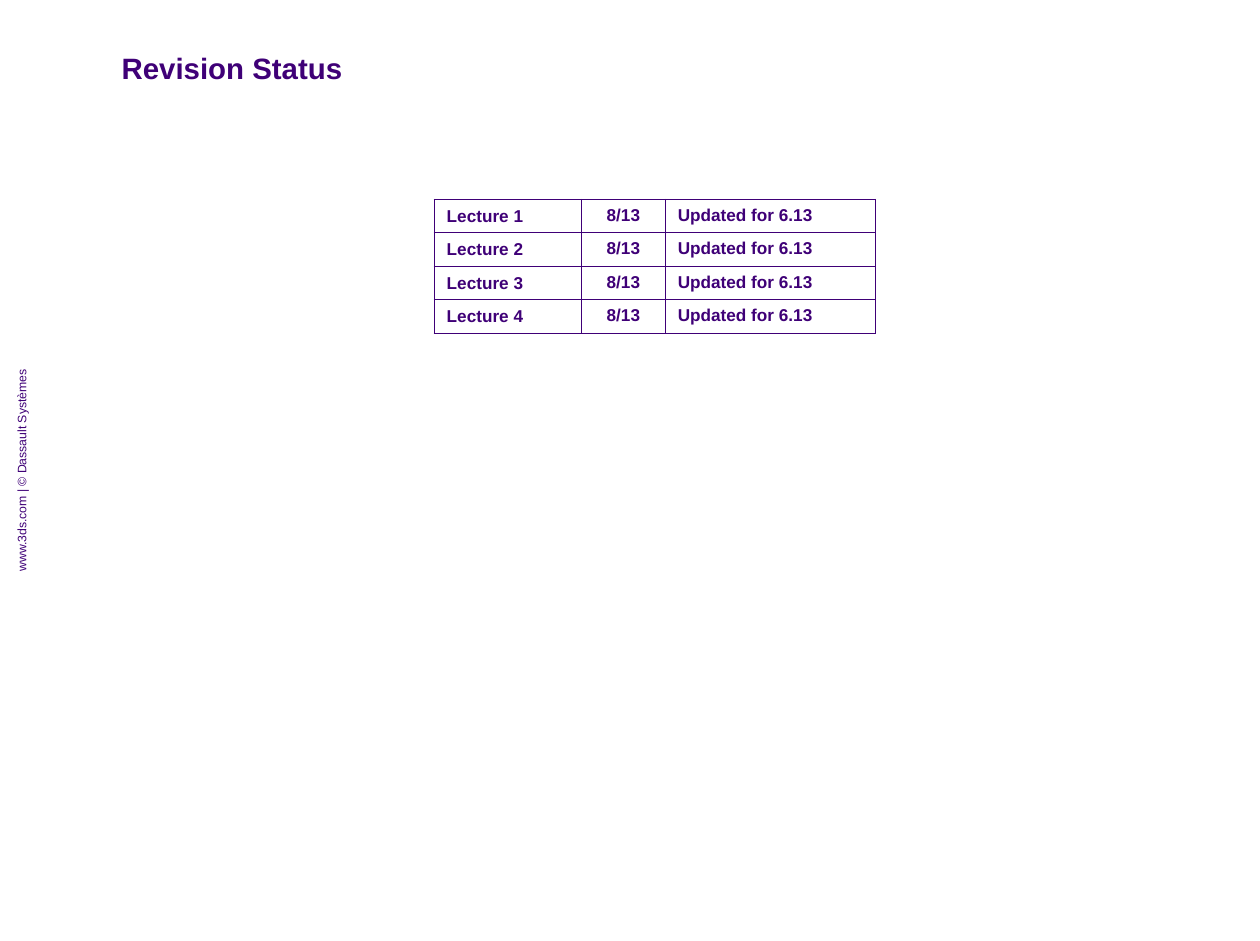
from lxml import etree
from pptx import Presentation
from pptx import util as u
from pptx.dml.color import RGBColor
from pptx.enum import text
from pptx.oxml import ns

PURPLE = RGBColor(0x3F, 0x00, 0x77)
WHITE = RGBColor(0xFF, 0xFF, 0xFF)
LECTURES = [(f"Lecture {number}", "8/13", "Updated for 6.13") for number in range(1, 5)]
COLUMN_WIDTHS = (4.24, 2.41, 6.05)


def write(paragraph, wording, size, bold=False, align=text.PP_ALIGN.LEFT):
    """Add one purple Arial run to a paragraph."""
    paragraph.alignment = align
    paragraph.space_before = u.Pt(0)
    run = paragraph.add_run()
    run.text = wording
    run.font.name = "Arial"
    run.font.size = u.Pt(size)
    run.font.bold = bold
    run.font.color.rgb = PURPLE


def set_margins(holder, side, end):
    """Set equal side margins and equal top and bottom margins."""
    holder.margin_left = holder.margin_right = u.Cm(side)
    holder.margin_top = holder.margin_bottom = u.Cm(end)


def add_borders(cell):
    """Draw a thin purple line on each side of a table cell."""
    properties = cell._tc.get_or_add_tcPr()
    for side in ("lnL", "lnR", "lnT", "lnB"):
        line = etree.SubElement(properties, ns.qn(f"a:{side}"), w=str(u.Pt(1)))
        fill = etree.SubElement(line, ns.qn("a:solidFill"))
        etree.SubElement(fill, ns.qn("a:srgbClr"), val=str(PURPLE))


def place_title(slide, left, top, width, height):
    """Move and fill the title placeholder."""
    title = slide.shapes.title
    title.left, title.top, title.width, title.height = map(u.Cm, (left, top, width, height))
    frame = title.text_frame
    frame.word_wrap = True
    frame.auto_size = text.MSO_AUTO_SIZE.NONE
    frame.vertical_anchor = text.MSO_ANCHOR.MIDDLE
    set_margins(frame, 0.25, 0.13)
    write(frame.paragraphs[0], "Revision Status", 24, bold=True)


def add_side_credit(slide, center_x, center_y, length, thickness):
    """Add the copyright line, which reads upwards along the slide edge."""
    credit = slide.shapes.add_textbox(
        u.Cm(center_x - length / 2), u.Cm(center_y - thickness / 2), u.Cm(length), u.Cm(thickness))
    credit.rotation = 270
    frame = credit.text_frame
    frame.word_wrap = True
    set_margins(frame, 0.25, 0.13)
    write(frame.paragraphs[0], "www.3ds.com | © Dassault Systèmes", 10,
          align=text.PP_ALIGN.CENTER)


def add_revisions(slide, left, top, width, height):
    """Add the table of lectures with their revision date and note."""
    revisions = slide.shapes.add_table(
        len(LECTURES), len(COLUMN_WIDTHS), *map(u.Cm, (left, top, width, height))).table
    revisions.first_row = revisions.horz_banding = False
    for column, share in zip(revisions.columns, COLUMN_WIDTHS):
        column.width = u.Cm(width * share / sum(COLUMN_WIDTHS))
    for row, entries in zip(revisions.rows, LECTURES):
        row.height = u.Cm(height / len(LECTURES))
        for index, (cell, entry) in enumerate(zip(row.cells, entries)):
            add_borders(cell)
            cell.fill.background()
            set_margins(cell, 0.36, 0.18)
            cell.vertical_anchor = text.MSO_ANCHOR.TOP if index else text.MSO_ANCHOR.MIDDLE
            align = text.PP_ALIGN.CENTER if index == 1 else text.PP_ALIGN.LEFT
            write(cell.text_frame.paragraphs[0], entry, 14, bold=True, align=align)


def main():
    """Build the revision status slide."""
    deck = Presentation()
    deck.slide_width, deck.slide_height = u.Cm(36.27), u.Cm(27.1)
    slide = deck.slides.add_slide(deck.slide_layouts[5])
    slide.background.fill.solid()
    slide.background.fill.fore_color.rgb = WHITE
    add_side_credit(slide, 0.62, 13.55, 27.1, 0.69)
    place_title(slide, 3.25, 1.3, 31.67, 1.3)
    add_revisions(slide, 12.5, 5.74, 12.7, 3.86)
    deck.save("out.pptx")


if __name__ == "__main__":
    main()
